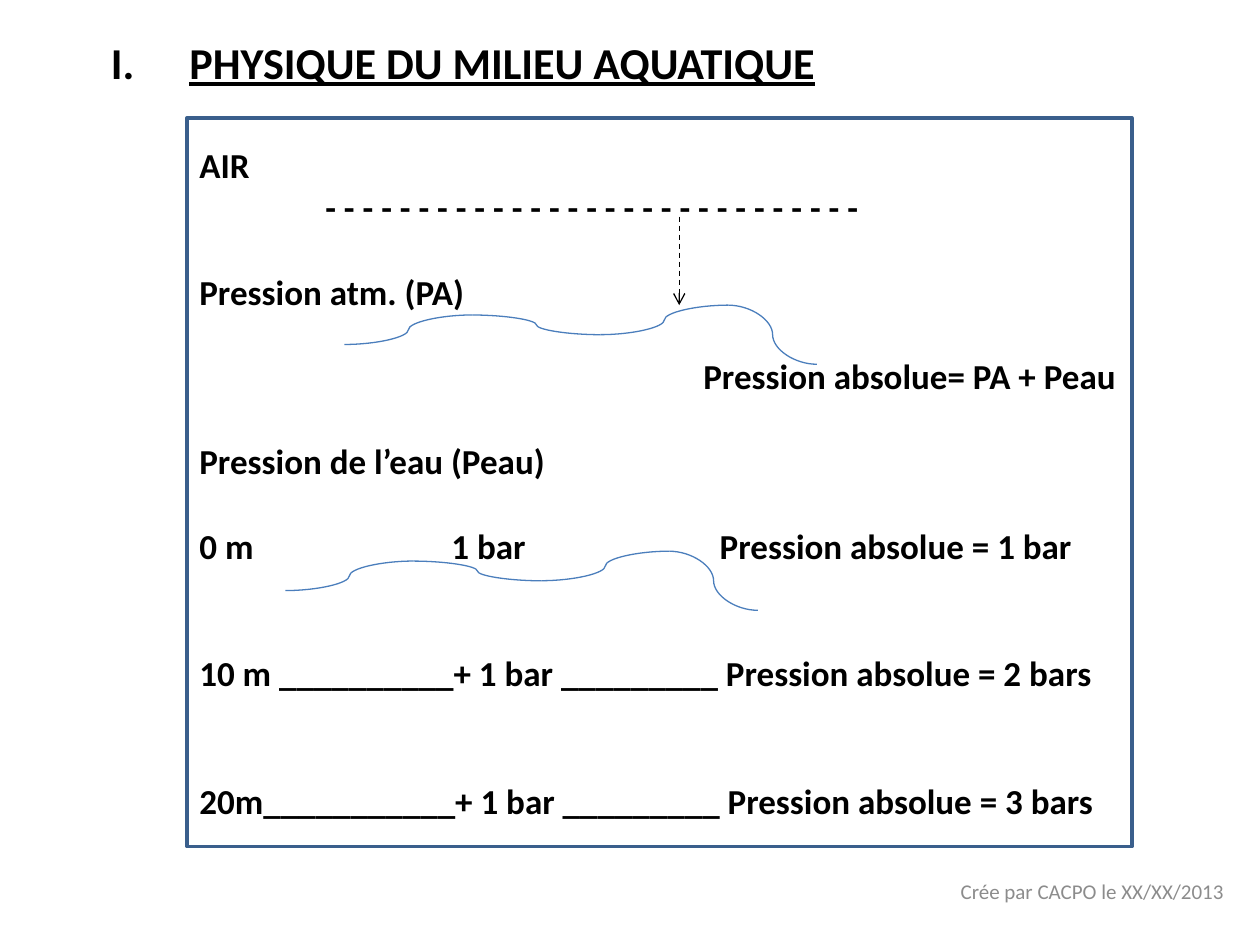
import pptx
import pptx.util
import pptx.dml.color
import pptx.enum.dml
import pptx.enum.shapes
import pptx.enum.text
import pptx.oxml.ns
import lxml.etree

COLORS = {"black": "000000", "white": "FFFFFF", "frame": "3A5F8C", "wave": "4B7EBC", "footer": "8C8C8C"}
COLORS = {name: pptx.dml.color.RGBColor.from_string(value) for name, value in COLORS.items()}
ALIGN = pptx.enum.text.PP_ALIGN
ANCHOR = pptx.enum.text.MSO_ANCHOR
CONNECTOR = pptx.enum.shapes.MSO_CONNECTOR

deck = pptx.Presentation()
deck.slide_width = pptx.util.Inches(10)
deck.slide_height = pptx.util.Inches(7.5)
page = deck.slides.add_slide(deck.slide_layouts[6])
cell = deck.slide_width // 128
line_pitch = 24.4


def add_span(para, text, size, color, bold=False, underline=None):
    span = para.add_run()
    span.text = text
    span.font.name = "Calibri"
    span.font.size = pptx.util.Pt(size)
    span.font.bold = bold
    span.font.underline = underline
    span.font.color.rgb = COLORS[color]


def add_line(shapes, kind, start, end, color):
    line = shapes.add_connector(kind, *(cell * value for value in (*start, *end)))
    line.line.color.rgb = COLORS[color]
    line.line.width = pptx.util.Pt(0.75)
    lxml.etree.SubElement(line._element.spPr, pptx.oxml.ns.qn("a:effectLst"))
    return line


footer = page.shapes.add_textbox(cell * 85, cell * 88, cell * 40.6, cell * 5.1).text_frame
footer.word_wrap = True
footer.vertical_anchor = ANCHOR.MIDDLE
footer.paragraphs[0].alignment = ALIGN.RIGHT
add_span(footer.paragraphs[0], "Crée par CACPO le XX/XX/2013", 12, "footer")

title = page.shapes.add_textbox(cell * 10, cell * 3, cell * 77, cell * 9).text_frame
title.word_wrap = True
para = title.paragraphs[0]
add_span(para, "PHYSIQUE DU MILIEU AQUATIQUE", 25.2, "black", True, True)
properties = para._p.get_or_add_pPr()
properties.set("marL", str(cell * 8))
properties.set("indent", str(-cell * 8))
lxml.etree.SubElement(properties, pptx.oxml.ns.qn("a:buFont"), typeface="Calibri")
lxml.etree.SubElement(properties, pptx.oxml.ns.qn("a:buAutoNum"), type="romanUcPeriod")

frame = page.shapes.add_shape(
    pptx.enum.shapes.MSO_SHAPE.RECTANGLE, cell * 19, cell * 12, cell * 96, cell * 74)
frame.shadow.inherit = False
frame.fill.solid()
frame.fill.fore_color.rgb = COLORS["white"]
frame.line.color.rgb = COLORS["frame"]
frame.line.width = pptx.util.Pt(2)
box = frame.text_frame
box.word_wrap = True
box.vertical_anchor = ANCHOR.MIDDLE

# text, empty lines above, left indent in inches, tab stops in inches
rows = [
    ("AIR", 0, 0, []),
    (" ".join("-" * 29), 0, 1, []),
    ("Pression atm. (PA)", 1, 0, []),
    ("Pression absolue= PA + Peau", 1, 4, []),
    ("Pression de l’eau (Peau)", 1, 0, []),
    ("0 m\t1 bar\tPression absolue = 1 bar", 1, 0, [2, 4.13]),
    ("10 m __________+ 1 bar _________ Pression absolue = 2 bars", 2, 0, []),
    ("20m___________+ 1 bar _________ Pression absolue = 3 bars", 2, 0, []),
]
for index, (text, gap, indent, stops) in enumerate(rows):
    para = box.add_paragraph() if index else box.paragraphs[0]
    para.alignment = ALIGN.LEFT
    para.space_before = pptx.util.Pt(gap * line_pitch)
    add_span(para, text, 20, "black", True)
    properties = para._p.get_or_add_pPr()
    properties.set("marL", str(pptx.util.Inches(indent)))
    if stops:
        tabs = lxml.etree.SubElement(properties, pptx.oxml.ns.qn("a:tabLst"))
        for stop in stops:
            lxml.etree.SubElement(
                tabs, pptx.oxml.ns.qn("a:tab"), pos=str(pptx.util.Inches(stop)), algn="l")

arrow = add_line(page.shapes, CONNECTOR.STRAIGHT, (69, 22), (69, 31), "black")
arrow.line.dash_style = pptx.enum.dml.MSO_LINE.DASH
lxml.etree.SubElement(arrow.line._get_or_add_ln(), pptx.oxml.ns.qn("a:tailEnd"), type="arrow")

wave_points = [(0, 0), (13, -3), (26, -1), (39, -4), (48, 2)]
for left, top in [(35, 35), (29, 60)]:
    wave = page.shapes.add_group_shape()
    points = [(left + x, top + y) for x, y in wave_points]
    for start, end in zip(points, points[1:]):
        add_line(wave.shapes, CONNECTOR.CURVE, start, end, "wave")

deck.save("out.pptx")
